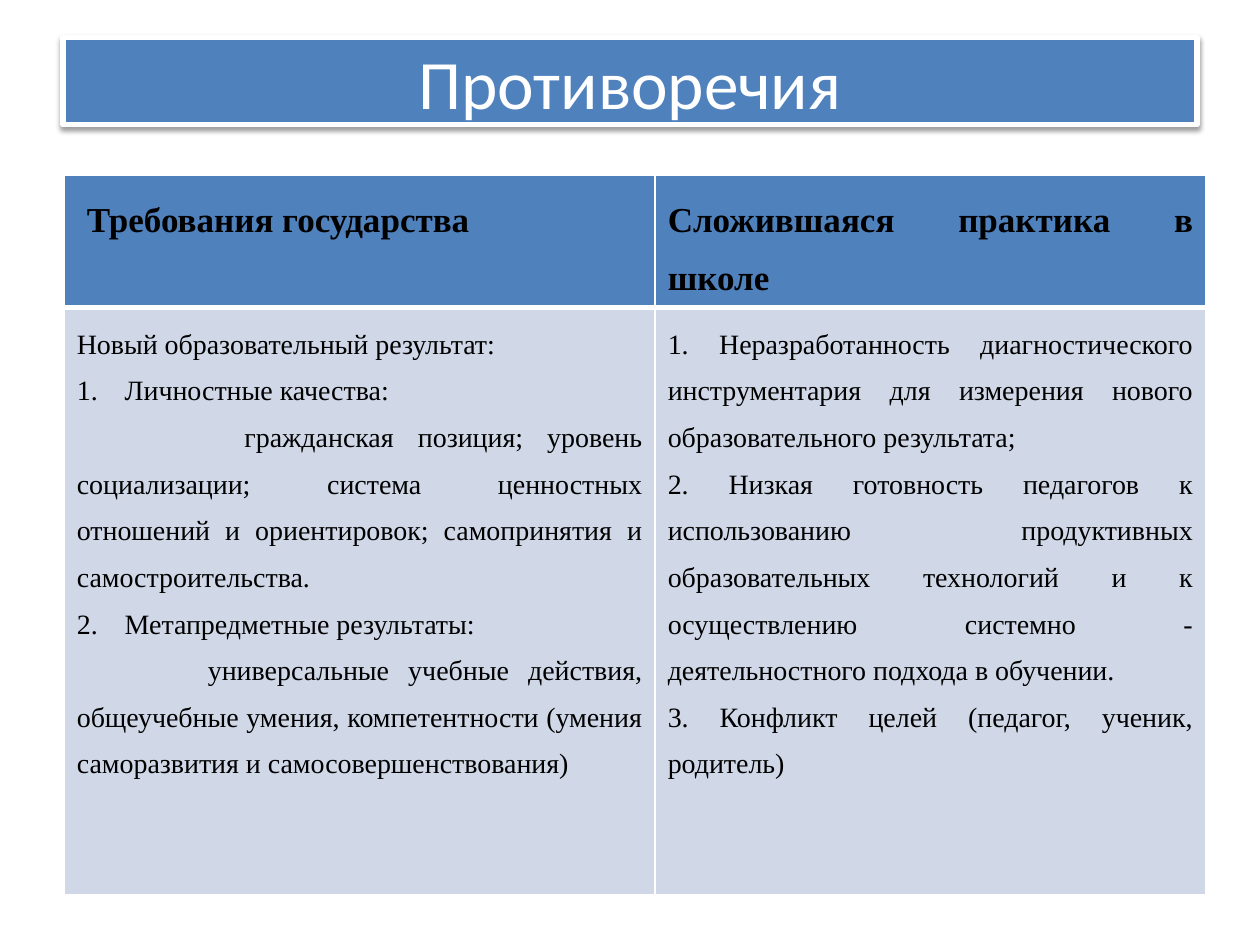
from lxml import etree
from pptx import Presentation
from pptx.dml.color import RGBColor
from pptx.enum import shapes, text
from pptx.oxml import parse_xml
from pptx.oxml.ns import nsdecls, qn
from pptx.util import Inches, Pt

BLUE = RGBColor(0x4F, 0x81, 0xBD)
PALE = RGBColor(0xD0, 0xD8, 0xE8)
WHITE = RGBColor(0xFF, 0xFF, 0xFF)
BLACK = RGBColor(0, 0, 0)
NUMBER_INDENT = 0.38


def add_text(paragraph, wording, font_name, size, color, bold=False):
    run = paragraph.add_run()
    run.text = wording
    run.font.name = font_name
    run.font.size = Pt(size)
    run.font.bold = bold
    run.font.color.rgb = color


def set_border(cell, side, width):
    properties = cell._tc.get_or_add_tcPr()
    line = etree.SubElement(properties, qn(f"a:{side}"), w=str(Pt(width)))
    fill = etree.SubElement(line, qn("a:solidFill"))
    etree.SubElement(fill, qn("a:srgbClr"), val=str(WHITE))


presentation = Presentation()
presentation.slide_width = Inches(10)
presentation.slide_height = Inches(7.5)
slide = presentation.slides.add_slide(presentation.slide_layouts[6])

# Title bar with a soft shadow
title = slide.shapes.add_shape(
    shapes.MSO_SHAPE.RECTANGLE, Inches(0.5), Inches(0.3), Inches(9), Inches(0.69))
title.fill.solid()
title.fill.fore_color.rgb = BLUE
title.line.color.rgb = WHITE
title.line.width = Pt(3)
title._element.spPr.append(parse_xml(
    f'<a:effectLst {nsdecls("a")}>'
    f'<a:outerShdw blurRad="{Pt(3.1)}" dist="{Pt(1.6)}" dir="5400000" rotWithShape="0">'
    '<a:srgbClr val="000000"><a:alpha val="38000"/></a:srgbClr>'
    '</a:outerShdw></a:effectLst>'))
title.text_frame.word_wrap = True
title.text_frame.vertical_anchor = text.MSO_ANCHOR.MIDDLE
paragraph = title.text_frame.paragraphs[0]
paragraph.alignment = text.PP_ALIGN.CENTER
add_text(paragraph, "Противоречия", "Calibri", 39.6, WHITE)

# Each paragraph: wording, first-line indent in inches, automatic number
rows = [
    [
        [("Требования государства", 0.08, None)],
        [("Сложившаяся практика в школе", 0, None)],
    ],
    [
        [
            ("Новый образовательный результат:", 0, None),
            ("Личностные качества:", 0, 1),
            ("гражданская позиция; уровень социализации; система ценностных "
             "отношений и ориентировок; самопринятия и самостроительства.", 1.33, None),
            ("Метапредметные результаты:", 0, 2),
            ("универсальные учебные действия, общеучебные умения, компетентности "
             "(умения саморазвития и самосовершенствования)", 1.04, None),
        ],
        [
            ("1. Неразработанность диагностического инструментария для измерения "
             "нового образовательного результата;", 0, None),
            ("2. Низкая готовность педагогов к использованию продуктивных "
             "образовательных технологий и к осуществлению системно - "
             "деятельностного подхода в обучении.", 0, None),
            ("3. Конфликт целей (педагог, ученик, родитель)", 0, None),
        ],
    ],
]

# Comparison table
table = slide.shapes.add_table(
    2, 2, Inches(0.51), Inches(1.39), Inches(9.06), Inches(5.71)).table
for column, width in zip(table.columns, (4.69, 4.37)):
    column.width = Inches(width)
for row, height in zip(table.rows, (1.05, 4.66)):
    row.height = Inches(height)

for row_index, row in enumerate(rows):
    header = row_index == 0
    for column_index, lines in enumerate(row):
        cell = table.cell(row_index, column_index)

        # Borders come before the fill in the cell properties
        for side in ("lnL", "lnR", "lnT", "lnB"):
            divider = side == ("lnB" if header else "lnT")
            set_border(cell, side, 3 if divider else 1)
        cell.fill.solid()
        cell.fill.fore_color.rgb = BLUE if header else PALE

        frame = cell.text_frame
        for line_index, (wording, indent, number) in enumerate(lines):
            paragraph = frame.add_paragraph() if line_index else frame.paragraphs[0]
            paragraph.alignment = text.PP_ALIGN.JUSTIFY
            paragraph.line_spacing = 1.5
            properties = paragraph._p.get_or_add_pPr()
            if number:
                properties.set("marL", str(Inches(NUMBER_INDENT)))
                properties.set("indent", str(Inches(-NUMBER_INDENT)))
                etree.SubElement(properties, qn("a:buFont"), typeface="+mj-lt")
                etree.SubElement(properties, qn("a:buAutoNum"),
                                 type="arabicPeriod", startAt=str(number))
            elif indent:
                properties.set("indent", str(Inches(indent)))
            add_text(paragraph, wording, "Times New Roman",
                     20 if header else 16, BLACK, header)

presentation.save("out.pptx")
